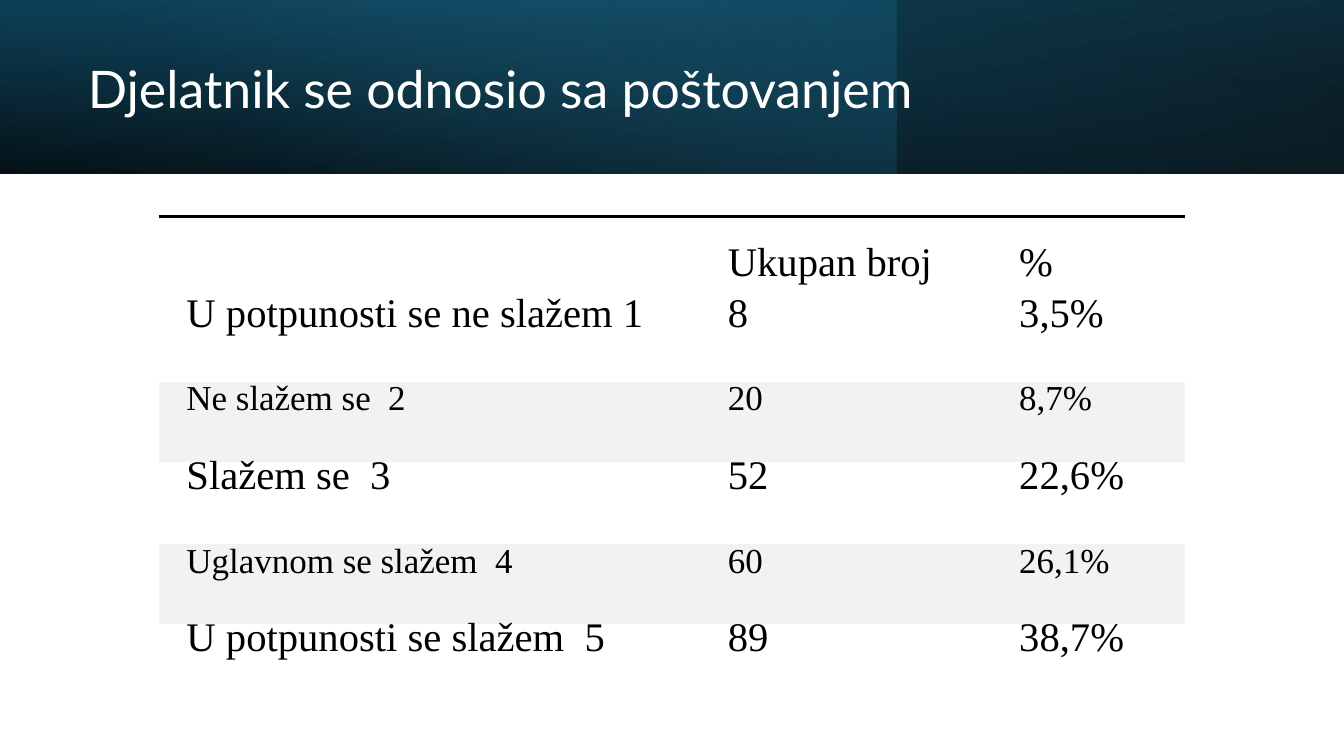
from lxml import etree
from pptx import Presentation
from pptx import util as u
from pptx.dml.color import RGBColor
from pptx.enum import shapes, text
from pptx.oxml import ns

WIDTH, HEIGHT = u.Inches(13.33), u.Inches(7.5)
BAND_HEIGHT = 22.93
COLUMNS = [40.28, 21.68, 14.4]
PLAIN_ROW, SHADED_ROW = 10.93, 10.53
NO_STYLE = "{2D5ABB26-0587-4C30-8999-92F81FD0307C}"
ANSWERS = [
    ("", "Ukupan broj", "%"),
    ("U potpunosti se ne slažem 1", "8", "3,5%"),
    ("Ne slažem se  2", "20", "8,7%"),
    ("Slažem se  3", "52", "22,6%"),
    ("Uglavnom se slažem  4", "60", "26,1%"),
    ("U potpunosti se slažem  5", "89", "38,7%"),
]


def across(percent):
    return int(WIDTH * percent / 100)


def down(percent):
    return int(HEIGHT * percent / 100)


def color(hex_value):
    return RGBColor.from_string(hex_value)


def child(parent, tag, **attributes):
    element = etree.SubElement(parent, ns.qn(tag))
    for name, value in attributes.items():
        element.set(name, str(value))
    return element


def write(frame, words, font, size, ink, spacing, align=None, indent=0):
    para = frame.paragraphs[0]
    para.line_spacing = spacing
    para.alignment = align
    if indent:
        para._p.get_or_add_pPr().set("marL", str(u.Inches(indent)))
    span = para.add_run()
    span.text = words
    span.font.name = font
    span.font.size = u.Pt(size)
    span.font.color.rgb = color(ink)


def add_band(page, width, stops, angle, flipped=False, rotation=0):
    band = page.shapes.add_shape(
        shapes.MSO_SHAPE.RECTANGLE, 0, 0, across(width), down(BAND_HEIGHT))
    band.shadow.inherit = False
    band.line.fill.background()
    band.rotation = rotation
    properties = band._element.spPr
    if flipped:
        properties.find(ns.qn("a:xfrm")).set("flipH", "1")
    gradient = etree.Element(ns.qn("a:gradFill"), rotWithShape="1")
    stop_list = child(gradient, "a:gsLst")
    for position, hex_value, opacity in stops:
        stop = child(stop_list, "a:gs", pos=position * 1000)
        tint = child(stop, "a:srgbClr", val=hex_value)
        child(tint, "a:alpha", val=opacity * 1000)
    child(gradient, "a:lin", ang=angle * 60000, scaled=0)
    properties.find(ns.qn("a:prstGeom")).addnext(gradient)


def add_title(page, words):
    title = page.shapes.title
    page.shapes._spTree.append(title._element)
    title.left, title.top = across(5.78), down(3.6)
    title.width, title.height = across(89.12), down(16.93)
    title.text_frame.vertical_anchor = text.MSO_ANCHOR.MIDDLE
    title.text_frame.word_wrap = True
    write(title.text_frame, words, font="Lato", size=37, ink="FFFFFF",
          spacing=0.9, align=text.PP_ALIGN.LEFT)


def add_top_border(cell):
    properties = cell._tc.get_or_add_tcPr()
    line = etree.Element(ns.qn("a:lnT"), w=str(u.Pt(2.25)))
    child(child(line, "a:solidFill"), "a:srgbClr", val="000000")
    properties.insert(0, line)


def format_cell(cell, words, header, shaded):
    cell.margin_left = cell.margin_right = u.Inches(0.23)
    cell.margin_top = cell.margin_bottom = u.Inches(0.14)
    cell.vertical_anchor = text.MSO_ANCHOR.BOTTOM if header else text.MSO_ANCHOR.TOP
    if shaded:
        cell.fill.solid()
        cell.fill.fore_color.rgb = color("F2F2F2")
    else:
        cell.fill.background()
    if header:
        add_top_border(cell)
    if words:
        write(cell.text_frame, words, font="Times New Roman",
              size=25 if shaded else 29, ink="000000", spacing=u.Pt(16),
              align=text.PP_ALIGN.JUSTIFY, indent=0.04)


def add_answer_table(page, answers):
    shaded_rows = [number > 0 and number % 2 == 0 for number in range(len(answers))]
    heights = [SHADED_ROW if shaded else PLAIN_ROW for shaded in shaded_rows]
    table = page.shapes.add_table(
        len(answers), len(COLUMNS), across(11.85), down(28.67),
        across(sum(COLUMNS)), down(sum(heights))).table
    table.first_row = table.horz_banding = False
    table._tbl.tblPr.find(ns.qn("a:tableStyleId")).text = NO_STYLE
    for column, width in zip(table.columns, COLUMNS):
        column.width = across(width)
    for number, answer in enumerate(answers):
        table.rows[number].height = down(heights[number])
        for cell, words in zip(table.rows[number].cells, answer):
            format_cell(cell, words, header=number == 0, shaded=shaded_rows[number])


def main():
    deck = Presentation()
    deck.slide_width, deck.slide_height = WIDTH, HEIGHT
    page = deck.slides.add_slide(deck.slide_layouts[5])
    page.background.fill.solid()
    page.background.fill.fore_color.rgb = color("FFFFFF")
    add_band(page, 100, [(0, "000000", 96), (100, "104862", 100)], 100,
             flipped=True, rotation=180)
    add_band(page, 66.67, [(0, "156082", 41), (74, "46B1E1", 0)], 140)
    add_band(page, 100, [(0, "000000", 63), (78, "156082", 15)], 260, flipped=True)
    add_title(page, "Djelatnik se odnosio sa poštovanjem")
    add_answer_table(page, ANSWERS)
    deck.save("out.pptx")


if __name__ == "__main__":
    main()
